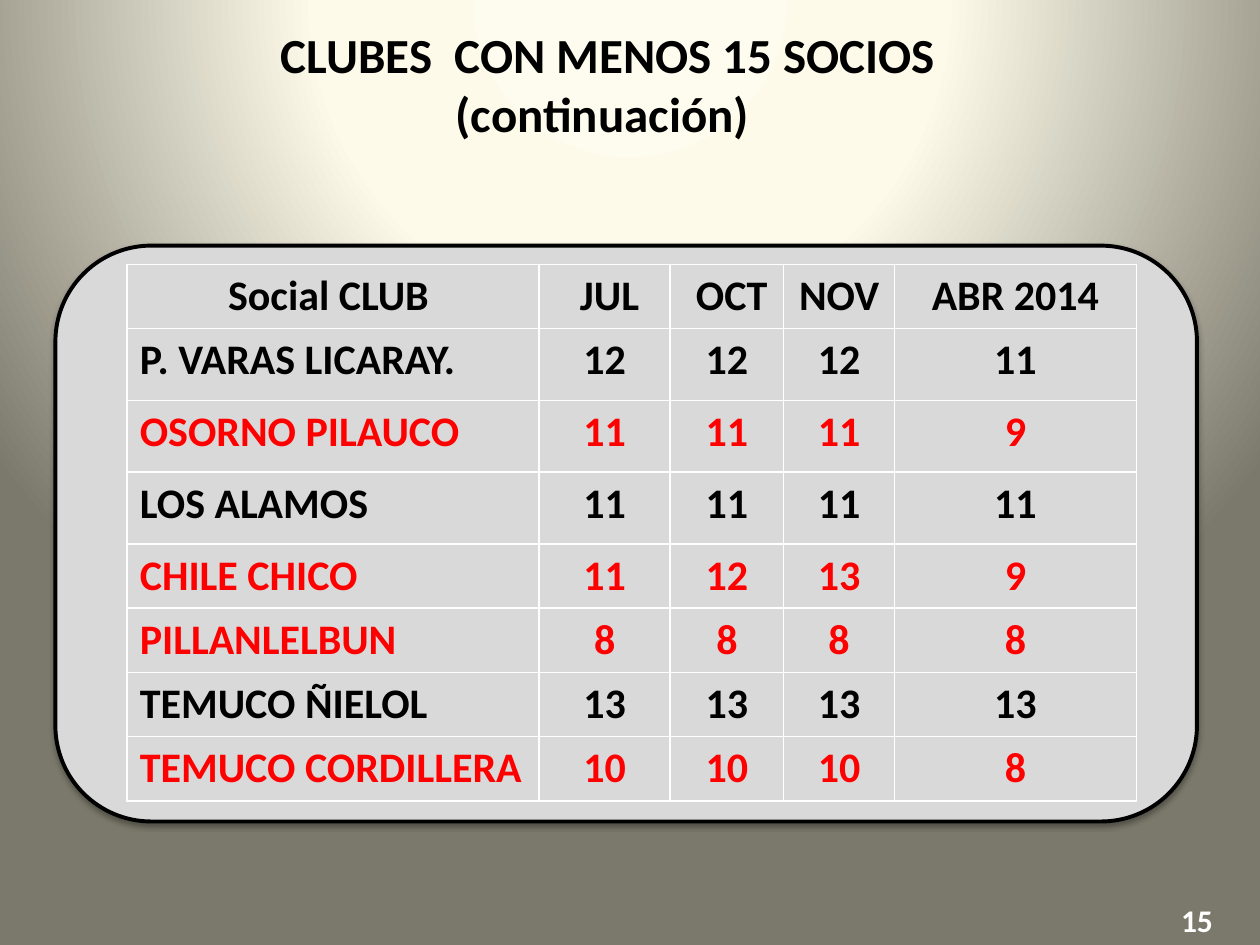
"""Build the slide listing clubs with fewer than 15 members."""
import pptx
import pptx.dml.color
import pptx.enum.shapes
import pptx.enum.text
import pptx.oxml
import pptx.util
from pptx.util import Inches

COLORS = {"black": "000000", "red": "FF0000", "white": "FFFFFF", "panel": "D9D9D9"}
GLOW = [(0, "FEFCEE"), (40, "FDFAEA"), (100, "7B796B")]
TITLE = [" CLUBES  CON MENOS 15 SOCIOS", "(continuación)"]
PAGE_NUMBER = "15"
HEADER = ("Social CLUB ", " JUL", " OCT", "NOV", "ABR 2014")
CLUBS = [
    ("P. VARAS LICARAY.", 12, 12, 12, 11),
    ("OSORNO PILAUCO", 11, 11, 11, 9),
    ("LOS ALAMOS", 11, 11, 11, 11),
    ("CHILE CHICO", 11, 12, 13, 9),
    ("PILLANLELBUN", 8, 8, 8, 8),
    ("TEMUCO ÑIELOL", 13, 13, 13, 13),
    ("TEMUCO CORDILLERA", 10, 10, 10, 8),
]
RED_BELOW = 10
COLUMN_WIDTHS = (3.27, 1.04, 0.9, 0.88, 1.92)
ROW_HEIGHTS = [0.5] + [0.57] * 3 + [0.51] * 4
CENTER = pptx.enum.text.PP_ALIGN.CENTER
LEFT = pptx.enum.text.PP_ALIGN.LEFT
MIDDLE = pptx.enum.text.MSO_ANCHOR.MIDDLE
NAMESPACES = (
    'xmlns:a="http://schemas.openxmlformats.org/drawingml/2006/main" '
    'xmlns:p="http://schemas.openxmlformats.org/presentationml/2006/main"'
)


def rgb(name):
    return pptx.dml.color.RGBColor.from_string(COLORS[name])


def write(frame, lines, size, color, align=CENTER):
    for index, line in enumerate(lines):
        para = frame.paragraphs[0] if index == 0 else frame.add_paragraph()
        para.alignment = align
        span = para.add_run()
        span.text = str(line)
        font = {"name": "Calibri", "size": pptx.util.Pt(size), "bold": True}
        for key, value in font.items():
            setattr(span.font, key, value)
        span.font.color.rgb = rgb(color)


def place(shape, left, top, width, height):
    bounds = {"left": left, "top": top, "width": width, "height": height}
    for key, value in bounds.items():
        setattr(shape, key, Inches(value))


def paint_background(page):
    stops = "".join(
        f'<a:gs pos="{position * 1000}"><a:srgbClr val="{color}"/></a:gs>'
        for position, color in GLOW
    )
    page.element.cSld.insert(0, pptx.oxml.parse_xml(
        f'<p:bg {NAMESPACES}><p:bgPr><a:gradFill rotWithShape="1">'
        f'<a:gsLst>{stops}</a:gsLst><a:path path="circle">'
        '<a:fillToRect l="50000" t="-80000" r="50000" b="180000"/></a:path>'
        '</a:gradFill><a:effectLst/></p:bgPr></p:bg>'
    ))


def add_panel(page):
    panel = page.shapes.add_shape(
        pptx.enum.shapes.MSO_SHAPE.ROUNDED_RECTANGLE,
        Inches(0.44), Inches(1.95), Inches(9.06), Inches(4.57),
    )
    panel.fill.solid()
    panel.fill.fore_color.rgb = rgb("panel")
    panel.line.color.rgb = rgb("black")
    panel.line.width = pptx.util.Pt(2.25)
    panel.element.spPr.append(pptx.oxml.parse_xml(
        f'<a:effectLst {NAMESPACES}><a:outerShdw blurRad="39370" dist="22860" '
        'dir="5400000" rotWithShape="0"><a:srgbClr val="000000">'
        '<a:alpha val="35000"/></a:srgbClr></a:outerShdw></a:effectLst>'
    ))


def add_members_table(page):
    rows = [HEADER] + CLUBS
    table = page.shapes.add_table(
        len(rows), len(HEADER), Inches(1.01), Inches(2.1),
        Inches(sum(COLUMN_WIDTHS)), Inches(sum(ROW_HEIGHTS)),
    ).table
    table.horz_banding = False
    for column, width in zip(table.columns, COLUMN_WIDTHS):
        column.width = Inches(width)
    for row, height, values in zip(table.rows, ROW_HEIGHTS, rows):
        row.height = Inches(height)
        is_red = values is not HEADER and values[-1] < RED_BELOW
        for index, value in enumerate(values):
            cell = row.cells[index]
            cell.fill.background()
            align = LEFT if index == 0 and values is not HEADER else CENTER
            write(cell.text_frame, [value], 24, "red" if is_red else "black", align)


def main():
    deck = pptx.Presentation()
    deck.slide_width, deck.slide_height = Inches(10), Inches(7.5)
    page = deck.slides.add_slide(deck.slide_layouts[5])
    paint_background(page)

    title = page.shapes.title
    place(title, 2.01, 0.14, 5.54, 1.04)
    title.text_frame.auto_size = pptx.enum.text.MSO_AUTO_SIZE.NONE
    title.text_frame.word_wrap = False
    write(title.text_frame, TITLE, 28, "black")

    add_panel(page)
    add_members_table(page)

    number = page.shapes.add_textbox(0, 0, 0, 0)
    place(number, 9.01, 7.1, 0.98, 0.4)
    number.text_frame.word_wrap = True
    number.text_frame.vertical_anchor = MIDDLE
    write(number.text_frame, [PAGE_NUMBER], 18, "white")
    deck.save("out.pptx")


if __name__ == "__main__":
    main()
